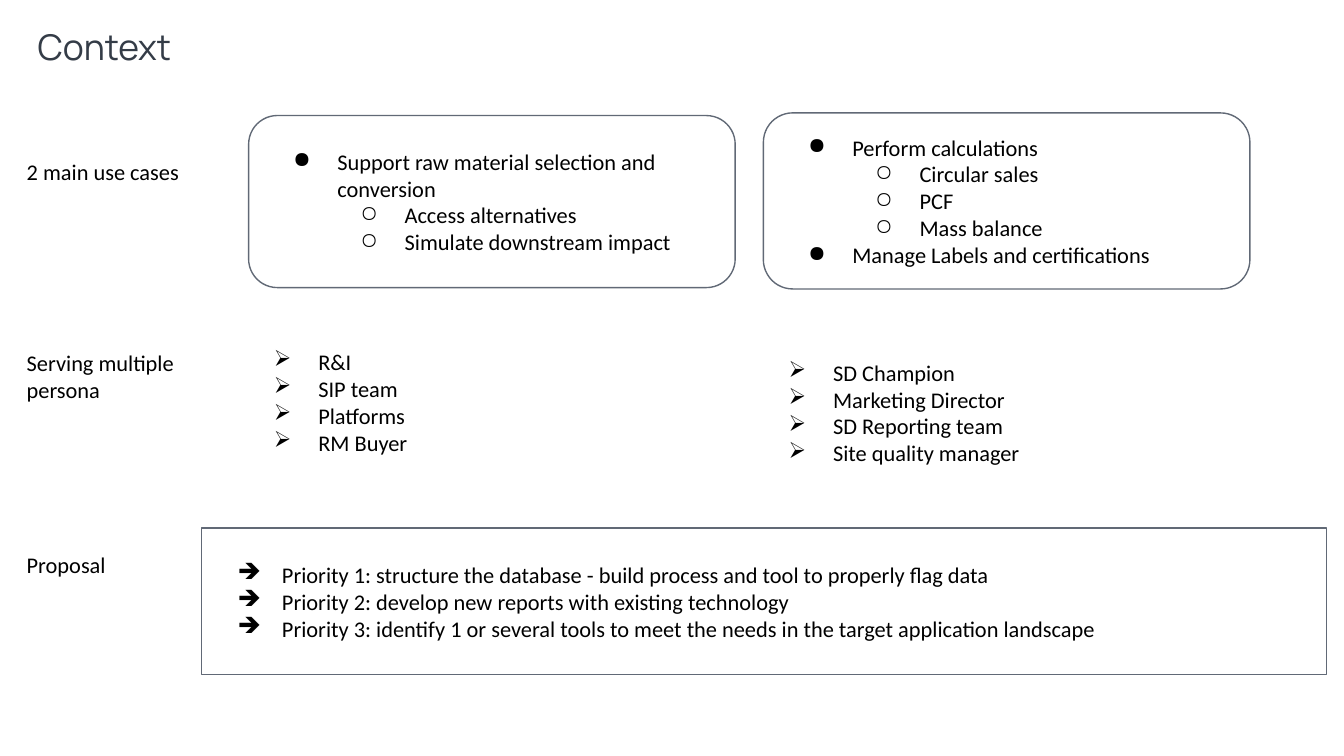
import pptx
import pptx.util
import pptx.oxml
import pptx.oxml.ns
import pptx.dml.color
import pptx.enum.shapes
import pptx.enum.text
from lxml import etree

Inches = pptx.util.Inches
KIND = pptx.enum.shapes.MSO_SHAPE
ANCHOR = pptx.enum.text.MSO_ANCHOR


def color(code):
    return pptx.dml.color.RGBColor.from_string(code)


def write(shape, items, size=12, font="Calibri", ink="000000", inset=0.1,
          anchor=ANCHOR.TOP):
    """Fill a shape with (level, bullet, text) items."""
    frame = shape.text_frame
    edge = Inches(inset)
    form = {"word_wrap": True, "vertical_anchor": anchor,
            "margin_left": edge, "margin_right": edge,
            "margin_top": edge, "margin_bottom": edge}
    for key, value in form.items():
        setattr(frame, key, value)
    for i, (level, mark, text) in enumerate(items):
        para = frame.add_paragraph() if i else frame.paragraphs[0]
        para.level = level
        para.alignment = pptx.enum.text.PP_ALIGN.LEFT
        if mark:
            props = para._p.get_or_add_pPr()
            props.set("marL", str(Inches(0.5 * (level + 1))))
            props.set("indent", str(Inches(-0.33)))
            tint = etree.SubElement(props, pptx.oxml.ns.qn("a:buClr"))
            etree.SubElement(tint, pptx.oxml.ns.qn("a:srgbClr"), val="000000")
            etree.SubElement(props, pptx.oxml.ns.qn("a:buChar"), char=mark)
        run = para.add_run()
        run.text = text
        for key, value in {"size": pptx.util.Pt(size), "name": font}.items():
            setattr(run.font, key, value)
        run.font.color.rgb = color(ink)


# A 16:9 slide
deck = pptx.Presentation()
deck.slide_width = Inches(10)
deck.slide_height = Inches(10 * 9 / 16)
slide = deck.slides.add_slide(deck.slide_layouts[6])
shapes = slide.shapes

# Title
title = shapes.add_textbox(Inches(0.28), Inches(0.22), Inches(7.09), Inches(0.47))
write(title, [(0, None, "Context")], size=19, font="Manrope", ink="343C47", inset=0)
title.text_frame.paragraphs[0].line_spacing = 0.9

# Outlined boxes: two use cases and the proposal
boxes = [
    (KIND.ROUNDED_RECTANGLE, 1.85, 0.86, 3.62, 1.28, [
        (0, "●", "Support raw material selection and conversion"),
        (1, "○", "Access alternatives"),
        (1, "○", "Simulate downstream impact")]),
    (KIND.ROUNDED_RECTANGLE, 5.68, 0.84, 3.62, 1.31, [
        (0, "●", "Perform calculations"),
        (1, "○", "Circular sales"),
        (1, "○", "PCF"),
        (1, "○", "Mass balance"),
        (0, "●", "Manage Labels and certifications")]),
    (KIND.RECTANGLE, 1.5, 3.93, 8.37, 1.09, [
        (0, "➔", "Priority 1: structure the database - build process and tool "
                 "to properly flag data"),
        (0, "➔", "Priority 2: develop new reports with existing technology"),
        (0, "➔", "Priority 3: identify 1 or several tools to meet the needs "
                 "in the target application landscape")]),
]
for kind, left, top, width, height, items in boxes:
    box = shapes.add_shape(kind, Inches(left), Inches(top), Inches(width), Inches(height))
    box.shadow.inherit = False
    box.fill.background()
    box.line.color.rgb = color("616976")
    box.line.width = pptx.util.Pt(0.75)
    write(box, items, anchor=ANCHOR.MIDDLE)

# Persona lists
teams = [
    (1.77, 2.49, ["R&I", "SIP team", "Platforms", "RM Buyer"]),
    (5.6, 2.57, ["SD Champion", "Marketing Director", "SD Reporting team",
                 "Site quality manager"]),
]
for left, top, names in teams:
    box = shapes.add_textbox(Inches(left), Inches(top), Inches(2.31), Inches(1.01))
    write(box, [(0, "➢", name) for name in names])

# Row labels
labels = [(1.08, 0.4, "2 main use cases"), (2.5, 0.61, "Serving multiple persona"),
          (4, 0.4, "Proposal")]
for top, height, text in labels:
    box = shapes.add_textbox(Inches(0.1), Inches(top), Inches(1.65), Inches(height))
    write(box, [(0, None, text)])

deck.save("out.pptx")
